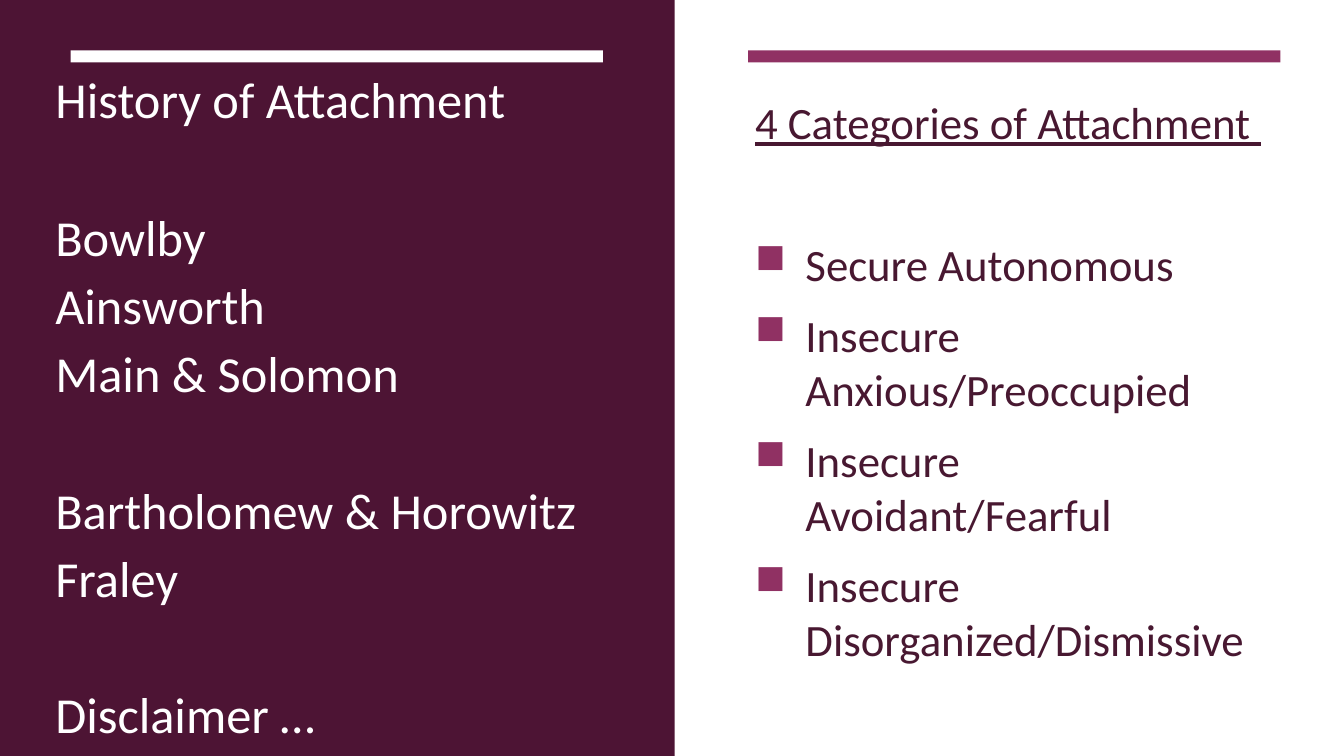
import pptx
import pptx.dml.color
import pptx.enum.shapes
import pptx.enum.text
import pptx.oxml
import pptx.oxml.ns
import pptx.util
from pptx.util import Inches

RGBColor = pptx.dml.color.RGBColor
WHITE = RGBColor(0xFF, 0xFF, 0xFF)
PLUM = RGBColor(0x4D, 0x14, 0x34)
MAGENTA = RGBColor(0x90, 0x31, 0x63)
INK = RGBColor(0x48, 0x18, 0x31)
FONT = "Calibri"


class AttachmentSlide:
    def __init__(self, deck):
        self.slide = deck.slides.add_slide(deck.slide_layouts[5])
        self.shapes = self.slide.shapes
        background = self.slide.background.fill
        background.solid()
        background.fore_color.rgb = WHITE

    def block(self, left, top, width, height, color):
        block = self.shapes.add_shape(
            pptx.enum.shapes.MSO_SHAPE.RECTANGLE,
            Inches(left), Inches(top), Inches(width), Inches(height))
        block.shadow.inherit = False
        block.fill.solid()
        block.fill.fore_color.rgb = color
        block.line.fill.background()

    def frame(self, shape):
        frame = shape.text_frame
        frame.word_wrap = True
        frame.auto_size = pptx.enum.text.MSO_AUTO_SIZE.NONE
        frame.vertical_anchor = pptx.enum.text.MSO_ANCHOR.TOP
        return frame

    def line(self, paragraph, text, size, color, before=0, after=6, underline=False):
        paragraph.alignment = pptx.enum.text.PP_ALIGN.LEFT
        paragraph.space_before = pptx.util.Pt(before)
        paragraph.space_after = pptx.util.Pt(after)
        run = paragraph.add_run()
        run.text = text
        run.font.name = FONT
        run.font.size = pptx.util.Pt(size)
        run.font.color.rgb = color
        run.font.underline = underline

    def title(self, left, top, width, height, text, size, color):
        title = self.shapes.title
        title.left, title.top = Inches(left), Inches(top)
        title.width, title.height = Inches(width), Inches(height)
        self.shapes._spTree.append(title._element)
        self.line(self.frame(title).paragraphs[0], text, size, color)

    def text_box(self, left, top, width, height):
        return self.frame(self.shapes.add_textbox(
            Inches(left), Inches(top), Inches(width), Inches(height)))

    def bullet(self, paragraph, color):
        properties = paragraph._p.get_or_add_pPr()
        properties.set("marL", str(Inches(0.5)))
        properties.set("indent", str(-Inches(0.5)))
        namespace = pptx.oxml.ns.nsdecls("a")
        for markup in (
            f'<a:buClr {namespace}><a:srgbClr val="{color}"/></a:buClr>',
            f'<a:buSzPct {namespace} val="92000"/>',
            f'<a:buChar {namespace} char="■"/>',
        ):
            properties.append(pptx.oxml.parse_xml(markup))


def main():
    deck = pptx.Presentation()
    deck.slide_width, deck.slide_height = Inches(13.33), Inches(7.5)
    page = AttachmentSlide(deck)

    page.block(0, 0, 6.69, 7.5, PLUM)
    for left, color in ((0.7, WHITE), (7.42, MAGENTA)):
        page.block(left, 0.5, 5.28, 0.12, color)

    categories = page.text_box(7.39, 0.89, 5.31, 5.8)
    page.line(categories.paragraphs[0], "4 Categories of Attachment ", 32, INK,
              underline=True)
    for index, category in enumerate((
            "Secure Autonomous", "Insecure Anxious/Preoccupied",
            "Insecure Avoidant/Fearful", "Insecure Disorganized/Dismissive")):
        paragraph = categories.add_paragraph()
        page.line(paragraph, category, 32, INK, before=6.4 if index else 57)
        page.bullet(paragraph, MAGENTA)

    page.title(0.45, 0.63, 6.2, 0.75, "History of Attachment", 36, WHITE)
    history = page.text_box(0.45, 2, 6.2, 5.5)
    groups = (("Bowlby", "Ainsworth", "Main & Solomon"),
              ("Bartholomew & Horowitz", "Fraley"),
              ("Disclaimer …",))
    paragraph = history.paragraphs[0]
    for group_index, group in enumerate(groups):
        for index, entry in enumerate(group):
            if group_index or index:
                paragraph = history.add_paragraph()
            gap = 49.2 if group_index and not index else 0
            page.line(paragraph, entry, 36, WHITE, before=gap, after=5.25)

    deck.save("out.pptx")


if __name__ == "__main__":
    main()
